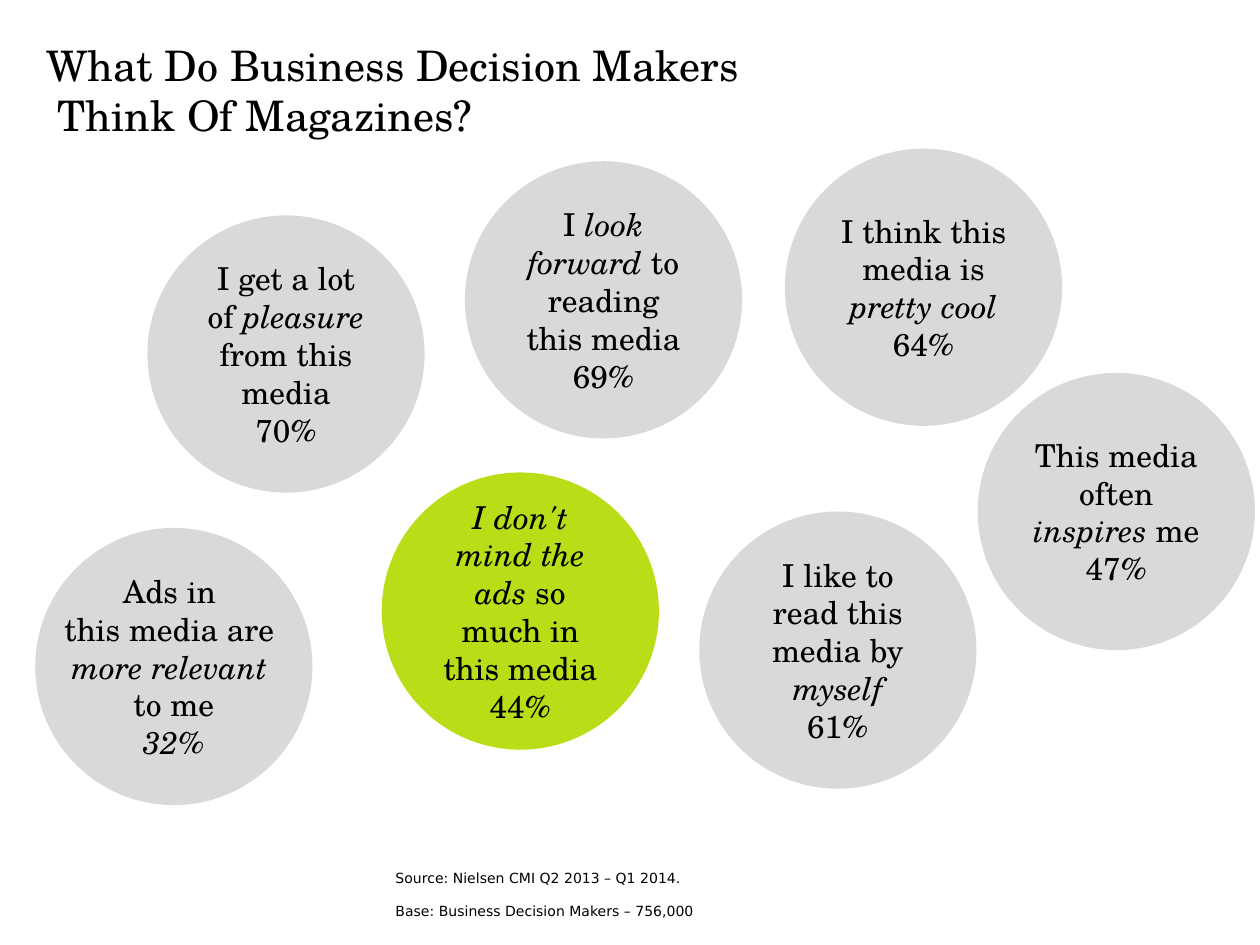
from dataclasses import dataclass

from pptx import Presentation
from pptx.dml.color import RGBColor
from pptx.enum.shapes import MSO_SHAPE
from pptx.enum.text import MSO_ANCHOR, MSO_AUTO_SIZE, PP_ALIGN
from pptx.util import Inches, Pt


@dataclass(frozen=True)
class Theme:
    ink: RGBColor = RGBColor(0x00, 0x00, 0x00)
    bubble: RGBColor = RGBColor(0xD9, 0xD9, 0xD9)
    highlight: RGBColor = RGBColor(0xB9, 0xDD, 0x16)
    serif: str = "TeX Gyre Schola"
    sans: str = "DejaVu Sans"
    title_size: Pt = Pt(24)
    bubble_size: Pt = Pt(18)
    source_size: Pt = Pt(8)


THEME = Theme()
DIAMETER = Inches(2.2)

TITLE = ["What Do Business Decision Makers", "Think Of Magazines?"]
SOURCE = [
    "Source: Nielsen CMI Q2 2013 – Q1 2014.",
    "Base: Business Decision Makers – 756,000",
]

# Asterisks enclose the italic words of each statement.
STATEMENTS = [
    (1.17, 1.71, "I get a lot of *pleasure* from this media", "70%"),
    (3.69, 1.28, "I* look forward *to reading this media", "69%"),
    (6.23, 1.18, "I think this media is *pretty cool*", "64%"),
    (5.55, 4.06, "I like to read this media by *myself*", "61%"),
    (7.76, 2.96, "This media often *inspires *me", "47%"),
    (0.28, 4.19, "Ads in \nthis media are \n*more relevant \n*to me", "*32%*"),
]
AD_TOLERANCE = (3.03, 3.75, "*I don't mind the ads *so much in this media", "44%")


def add_text(paragraph, text, font_name, size, italic=False):
    run = paragraph.add_run()
    run.text = text
    run.font.name = font_name
    run.font.size = size
    run.font.italic = italic
    run.font.color.rgb = THEME.ink


def add_marked_text(paragraph, marked):
    for part_index, part in enumerate(marked.split("*")):
        for line_index, line in enumerate(part.split("\n")):
            if line_index:
                paragraph.add_line_break()
            if line:
                add_text(paragraph, line, THEME.serif, THEME.bubble_size,
                         italic=part_index % 2 == 1)


def fill_lines(frame, lines, font_name, size):
    for index, line in enumerate(lines):
        paragraph = frame.add_paragraph() if index else frame.paragraphs[0]
        paragraph.alignment = PP_ALIGN.LEFT
        add_text(paragraph, line, font_name, size)
    frame.margin_top = frame.margin_bottom = 0
    frame.word_wrap = True
    frame.auto_size = MSO_AUTO_SIZE.NONE


def set_title(slide):
    heading = slide.shapes.title
    heading.left, heading.top = Inches(0.27), Inches(0.49)
    heading.width, heading.height = Inches(7.09), Inches(0.62)
    frame = heading.text_frame
    fill_lines(frame, TITLE, THEME.serif, THEME.title_size)
    frame.vertical_anchor = MSO_ANCHOR.BOTTOM
    second_line = frame.paragraphs[1]
    second_line._p.get_or_add_pPr().set("marL", str(Inches(0.09)))


def add_bubble(slide, left, top, statement, share, color=THEME.bubble):
    bubble = slide.shapes.add_shape(
        MSO_SHAPE.OVAL, Inches(left), Inches(top), DIAMETER, DIAMETER)
    bubble.shadow.inherit = False
    bubble.fill.solid()
    bubble.fill.fore_color.rgb = color
    bubble.line.fill.background()
    frame = bubble.text_frame
    frame.word_wrap = "\n" not in statement
    frame.vertical_anchor = MSO_ANCHOR.MIDDLE
    for paragraph, marked in (
        (frame.paragraphs[0], statement),
        (frame.add_paragraph(), share),
    ):
        paragraph.alignment = PP_ALIGN.CENTER
        add_marked_text(paragraph, marked)


def add_source(slide):
    source = slide.shapes.add_textbox(
        Inches(3.04), Inches(6.9), Inches(8.92), Inches(0.34))
    fill_lines(source.text_frame, SOURCE, THEME.sans, THEME.source_size)
    source.text_frame.paragraphs[1].space_before = Pt(9.4)


def main():
    deck = Presentation()
    deck.slide_width, deck.slide_height = Inches(10), Inches(7.5)
    slide = deck.slides.add_slide(deck.slide_layouts.get_by_name("Title Only"))
    set_title(slide)
    for statement in STATEMENTS:
        add_bubble(slide, *statement)
    add_bubble(slide, *AD_TOLERANCE, color=THEME.highlight)
    add_source(slide)
    deck.save("out.pptx")


if __name__ == "__main__":
    main()
